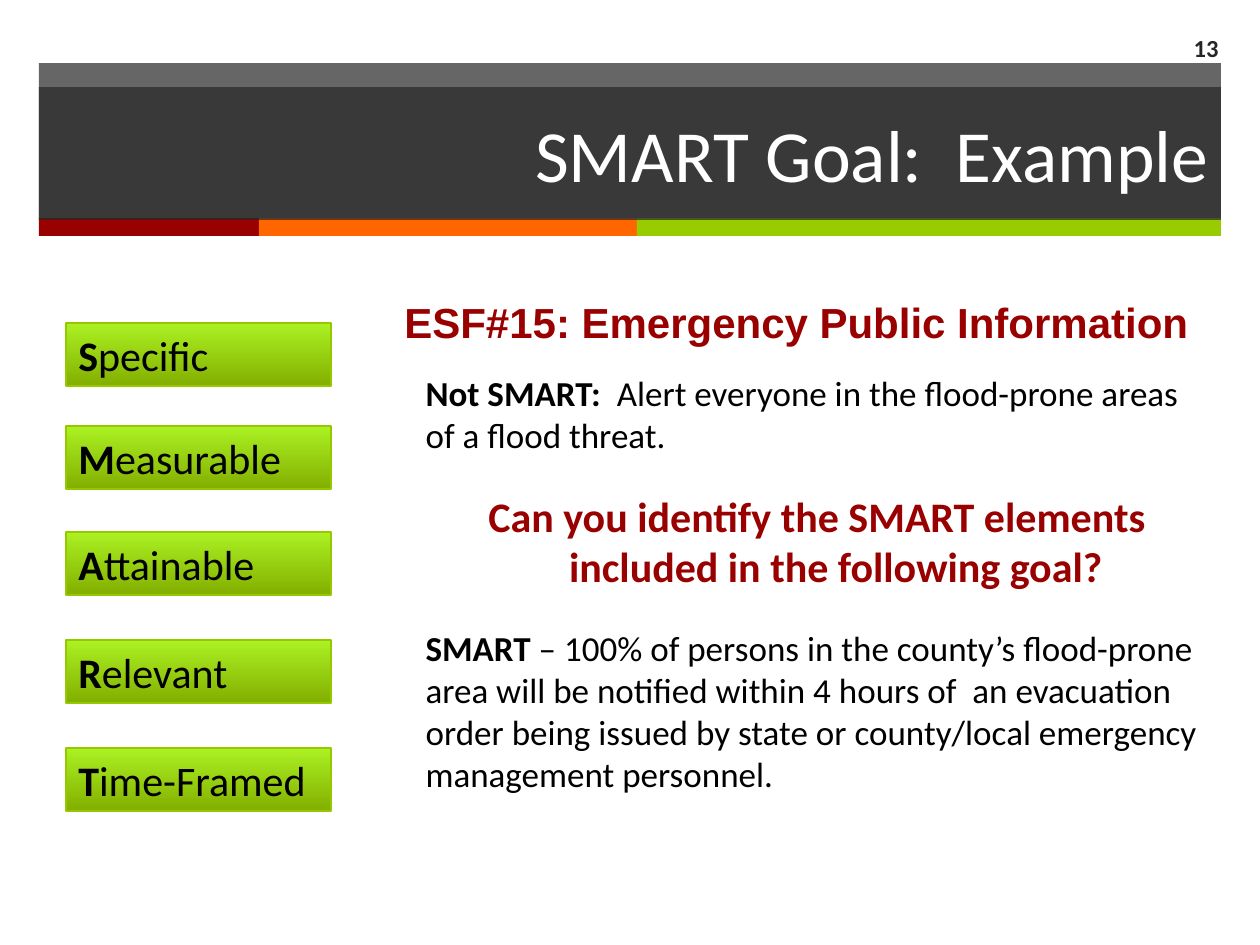
"""Builds the SMART goal example slide."""
from typing import NamedTuple

from lxml.etree import SubElement
from pptx import Presentation
from pptx.dml.color import RGBColor
from pptx.enum.shapes import MSO_SHAPE as Preset
from pptx.enum.text import MSO_ANCHOR as Anchor
from pptx.enum.text import MSO_AUTO_SIZE as AutoSize
from pptx.enum.text import PP_ALIGN as Align
from pptx.oxml.ns import qn
from pptx.util import Pt

EMU_PER_PX = 914400 / 126
COLORS = {
    "charcoal": "262626", "red": "990000", "orange": "FF6600",
    "green": "99CC00", "white": "FFFFFF", "black": "000000",
    "leaf_dark": "83AF00", "leaf_light": "ABF123", "leaf_edge": "96C800",
}


class Area(NamedTuple):
    left: int
    top: int
    width: int
    height: int


class Stripe(NamedTuple):
    color: str
    width: int


class Criterion(NamedTuple):
    word: str
    top: int


class Passage(NamedTuple):
    lead: str
    rest: str
    size: int = 20
    color: str = "black"
    align: Align = Align.LEFT
    margin: int = 26
    indent: int = 0


HEADER = Area(39, 63, 1182, 156)
TITLE = Area(39, 87, 1182, 133)
BODY = Area(387, 365, 834, 551)
PAGE_NUMBER = Area(1144, 23, 87, 49)
HEADING = Area(392, 290, 830, 63)
STRIPES = [Stripe("red", 220), Stripe("orange", 378), Stripe("green", 584)]
CRITERIA = [
    Criterion("Specific", 323), Criterion("Measurable", 426),
    Criterion("Attainable", 532), Criterion("Relevant", 640),
    Criterion("Time-Framed", 748),
]
PASSAGES = [
    Passage("Not SMART:  ",
            "Alert everyone in the flood-prone areas of a flood threat."),
    Passage("Can you identify the SMART elements included in the following goal?",
            "", 24, "red", Align.CENTER, 64, -38),
    Passage("SMART",
            " – 100% of persons in the county’s flood-prone area will be notified "
            "within 4 hours of  an evacuation order being issued by state or "
            "county/local emergency management personnel."),
]


def px(length: int) -> int:
    return round(length * EMU_PER_PX)


def rgb(name: str) -> RGBColor:
    return RGBColor.from_string(COLORS[name])


def place(shape, area: Area) -> None:
    shape.left, shape.top, shape.width, shape.height = map(px, area)


def paint(shape, color: str, opacity: int = 100) -> None:
    shape.fill.solid()
    shape.fill.fore_color.rgb = rgb(color)
    if opacity < 100:
        tint = shape._element.spPr.find(qn("a:solidFill"))[0]
        SubElement(tint, qn("a:alpha"), val=str(opacity * 1000))


def style(paragraph, size: int, color: str, align: Align = Align.LEFT,
          face: str = "Calibri") -> None:
    paragraph.alignment = align
    paragraph.font.name = face
    paragraph.font.size = Pt(size)
    paragraph.font.color.rgb = rgb(color)


def add_lead(paragraph, lead: str, rest: str) -> None:
    for words, bold in ((lead, True), (rest, False)):
        if words:
            run = paragraph.add_run()
            run.text = words
            run.font.bold = bold


def add_rectangle(slide, area: Area):
    rectangle = slide.shapes.add_shape(Preset.RECTANGLE, *map(px, area))
    rectangle.shadow.inherit = False
    return rectangle


def add_header(slide) -> None:
    band = add_rectangle(slide, HEADER)
    paint(band, "charcoal", 70)
    band.line.fill.background()
    left = HEADER.left
    for stripe in STRIPES:
        block = add_rectangle(slide, Area(left, 218, stripe.width, 18))
        paint(block, stripe.color)
        block.line.fill.background()
        left += stripe.width


def fill_title(slide) -> None:
    title = slide.shapes.title
    slide.shapes._spTree.append(title._element)
    place(title, TITLE)
    paint(title, "charcoal", 70)
    title.text_frame.text = "SMART Goal:  Example"
    title.text_frame.vertical_anchor = Anchor.MIDDLE
    title.text_frame.auto_size = AutoSize.NONE
    style(title.text_frame.paragraphs[0], 42, "white", Align.RIGHT)


def fill_body(slide) -> None:
    body = slide.placeholders[1]
    place(body, BODY)
    frame = body.text_frame
    frame.auto_size = AutoSize.NONE
    for index, passage in enumerate(PASSAGES):
        paragraph = frame.add_paragraph() if index else frame.paragraphs[0]
        style(paragraph, passage.size, passage.color, passage.align)
        paragraph.space_before = Pt(20)
        properties = paragraph._p.get_or_add_pPr()
        properties.set("marL", str(px(passage.margin)))
        properties.set("indent", str(px(passage.indent)))
        properties.insert_element_before(
            properties.makeelement(qn("a:buNone")), "a:tabLst", "a:defRPr", "a:extLst")
        add_lead(paragraph, passage.lead, passage.rest)


def add_criterion(slide, criterion: Criterion) -> None:
    box = add_rectangle(slide, Area(66, criterion.top, 265, 63))
    box.fill.gradient()
    box.fill.gradient_angle = 90
    for stop, color in zip(box.fill.gradient_stops, ("leaf_dark", "leaf_light")):
        stop.color.rgb = rgb(color)
    box.line.color.rgb = rgb("leaf_edge")
    box.line.width = Pt(1)
    box.text_frame.word_wrap = True
    box.text_frame.auto_size = AutoSize.SHAPE_TO_FIT_TEXT
    label = box.text_frame.paragraphs[0]
    style(label, 24, "black")
    add_lead(label, criterion.word[0], criterion.word[1:])


def add_caption(slide, area: Area, words: str, size: int, color: str,
                align: Align, face: str, anchor: Anchor) -> None:
    frame = slide.shapes.add_textbox(*map(px, area)).text_frame
    frame.word_wrap = True
    frame.vertical_anchor = anchor
    frame.text = words
    style(frame.paragraphs[0], size, color, align, face)
    frame.paragraphs[0].font.bold = True


def main() -> None:
    deck = Presentation()
    deck.slide_width, deck.slide_height = px(1260), px(945)
    slide = deck.slides.add_slide(deck.slide_layouts[1])
    add_header(slide)
    fill_title(slide)
    fill_body(slide)
    add_caption(slide, PAGE_NUMBER, "13", 14, "charcoal", Align.RIGHT,
                "Calibri", Anchor.MIDDLE)
    for criterion in CRITERIA:
        add_criterion(slide, criterion)
    add_caption(slide, HEADING, "ESF#15: Emergency Public Information", 24, "red",
                Align.LEFT, "Arial", Anchor.TOP)
    deck.save("out.pptx")


if __name__ == "__main__":
    main()
